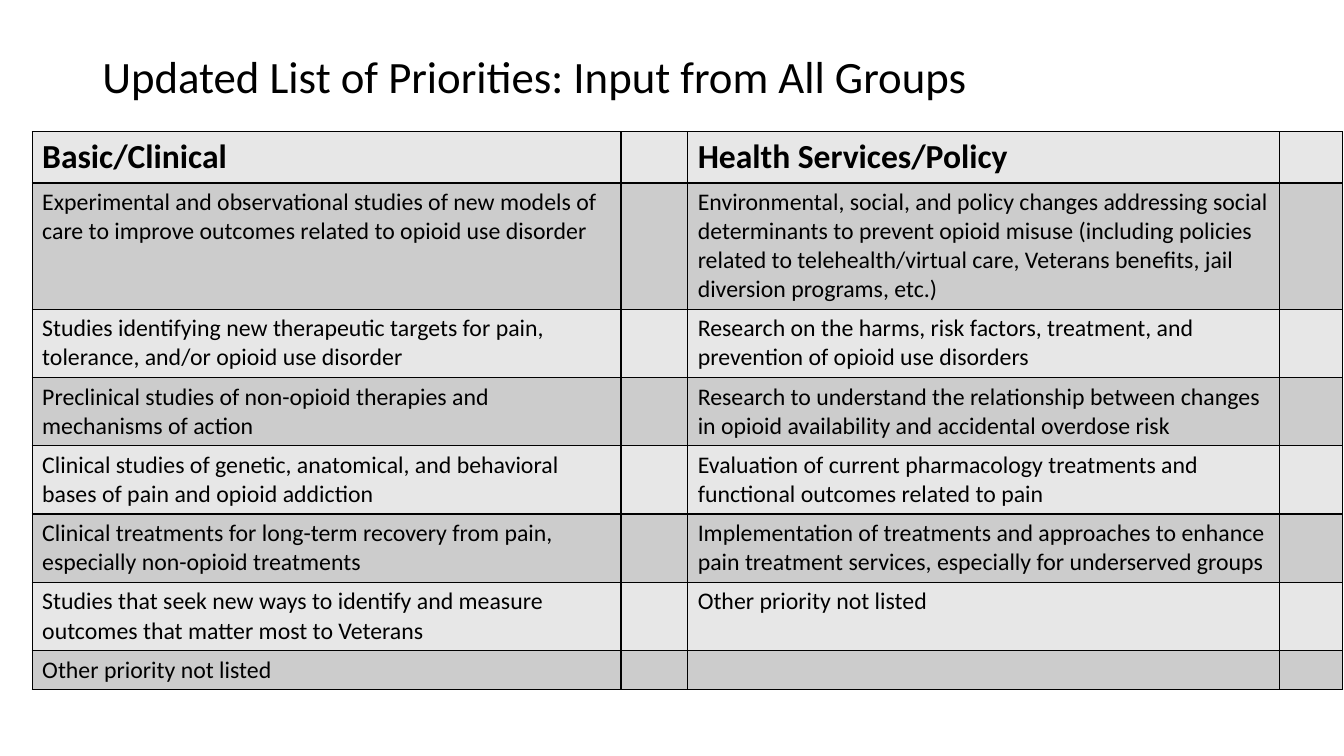
from lxml.etree import SubElement
from pptx import Presentation
from pptx.dml.color import RGBColor
from pptx.enum.text import MSO_ANCHOR as Anchor
from pptx.oxml.ns import qn
from pptx.util import Cm, Pt

FONT = "Calibri"
BLACK, LIGHT, DARK = "000000", "E7E7E7", "CCCCCC"
TITLE = "Updated List of Priorities: Input from All Groups"
HEADS = "Basic/Clinical", "Health Services/Policy"
BASIC = [
    "Experimental and observational studies of new models of care to improve "
    "outcomes related to opioid use disorder",
    "Studies identifying new therapeutic targets for pain, tolerance, and/or "
    "opioid use disorder",
    "Preclinical studies of non-opioid therapies and mechanisms of action",
    "Clinical studies of genetic, anatomical, and behavioral bases of pain "
    "and opioid addiction",
    "Clinical treatments for long-term recovery from pain, especially "
    "non-opioid treatments",
    "Studies that seek new ways to identify and measure outcomes that matter "
    "most to Veterans",
    "Other priority not listed",
]
POLICY = [
    "Environmental, social, and policy changes addressing social determinants "
    "to prevent opioid misuse (including policies related to "
    "telehealth/virtual care, Veterans benefits, jail diversion programs, etc.)",
    "Research on the harms, risk factors, treatment, and prevention of opioid "
    "use disorders",
    "Research to understand the relationship between changes in opioid "
    "availability and accidental overdose risk",
    "Evaluation of current pharmacology treatments and functional outcomes "
    "related to pain",
    "Implementation of treatments and approaches to enhance pain treatment "
    "services, especially for underserved groups",
    "Other priority not listed",
    "",
]
WIDTHS = [14.84, 1.68, 14.91, 1.6]
HEIGHTS = [1.29, 3.18] + [1.72] * 5 + [0.98]


def color(code):
    return RGBColor.from_string(code)


def style(para, size, bold=False):
    font = para.font
    font.name, font.size, font.bold = FONT, Pt(size), bold
    font.color.rgb = color(BLACK)


def border(cell):
    props = cell._tc.get_or_add_tcPr()
    for side in "LRTB":
        line = SubElement(props, qn(f"a:ln{side}"), w=str(Pt(1)))
        fill = SubElement(line, qn("a:solidFill"))
        SubElement(fill, qn("a:srgbClr"), val=BLACK)


def add_title(slide, left, top, width, height):
    frame = slide.shapes.add_textbox(
        Cm(left), Cm(top), Cm(width), Cm(height)).text_frame
    frame.word_wrap = True
    frame.vertical_anchor = Anchor.MIDDLE
    para = frame.paragraphs[0]
    para.text = TITLE
    para.line_spacing = 0.9
    style(para, 32)


def add_grid(slide, left, top):
    """Place the priorities beside empty columns for votes."""
    rows = [HEADS, *zip(BASIC, POLICY)]
    table = slide.shapes.add_table(
        len(rows), len(WIDTHS), Cm(left), Cm(top),
        Cm(sum(WIDTHS)), Cm(sum(HEIGHTS))).table
    for col, width in zip(table.columns, WIDTHS):
        col.width = Cm(width)
    for i, (row, height, pair) in enumerate(zip(table.rows, HEIGHTS, rows)):
        row.height = Cm(height)
        for cell, text in zip(row.cells, (pair[0], "", pair[1], "")):
            border(cell)
            cell.fill.solid()
            cell.fill.fore_color.rgb = color(DARK if i % 2 else LIGHT)
            para = cell.text_frame.paragraphs[0]
            if text:
                para.text = text
            head = i == 0
            style(para, 24 if head else 17, head)


def main():
    deck = Presentation()
    deck.slide_width, deck.slide_height = Cm(33.87), Cm(19.05)
    slide = deck.slides.add_slide(deck.slide_layouts[6])
    add_title(slide, 2.33, 1.02, 29.21, 1.96)
    add_grid(slide, 0.81, 3.32)
    deck.save("out.pptx")


if __name__ == "__main__":
    main()
